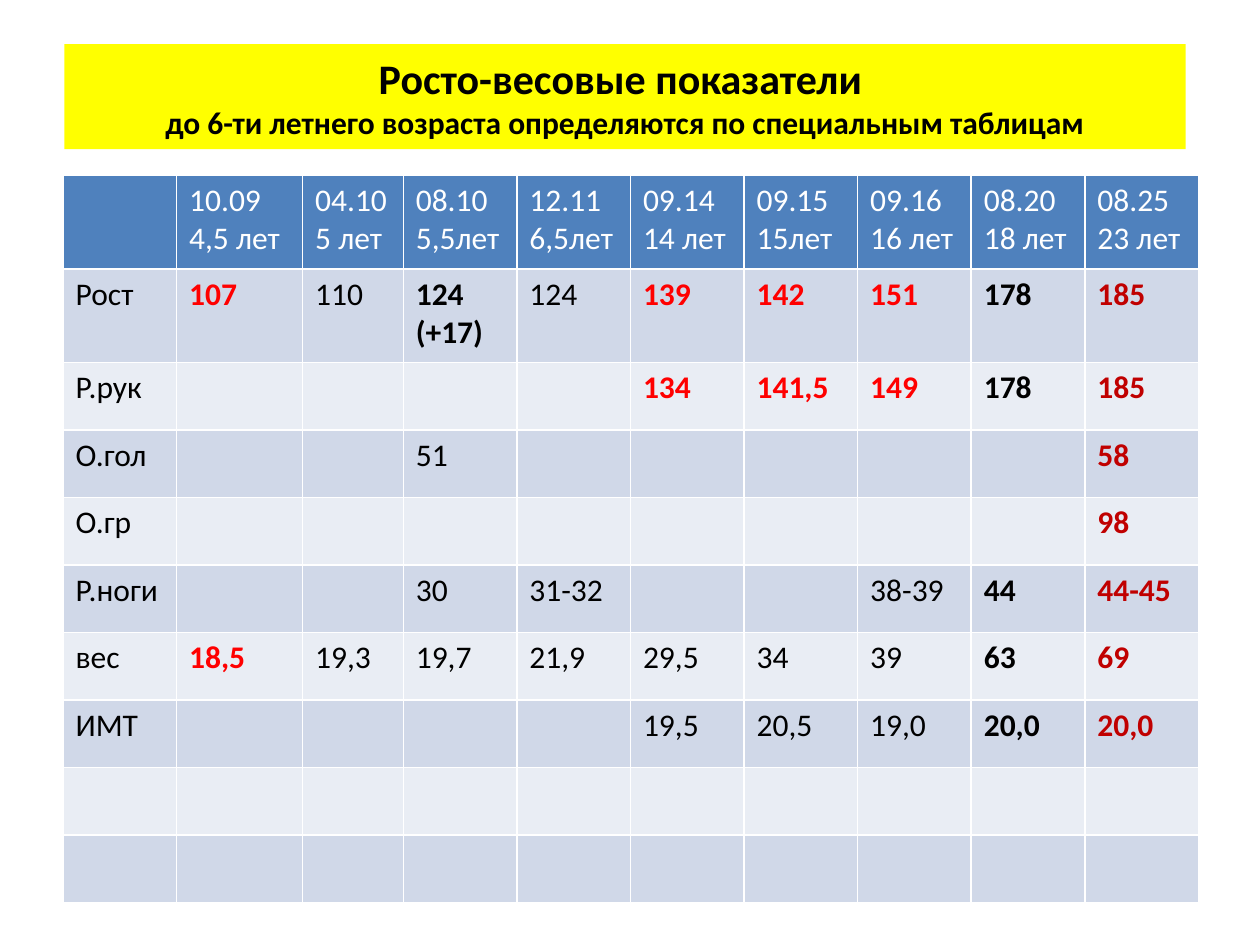
"""Build a slide with a table of height and weight figures by age."""
import pptx
import pptx.dml.color
import pptx.enum.text
import pptx.util

Cm = pptx.util.Cm
RGB = pptx.dml.color.RGBColor.from_string
COLORS = {
    "title": "FFFF00", "head": "4F81BD", "odd": "D0D8E8", "even": "E9EDF4",
    "white": "FFFFFF", "black": "000000", "red": "FF0000", "dark": "C00000",
}


def write(para, text, size=18, color="black", bold=False, align=None):
    """Add one formatted run to a paragraph."""
    para.alignment = align
    run = para.add_run()
    run.text = text
    run.font.name = "Calibri"
    run.font.size = pptx.util.Pt(size)
    run.font.bold = bold
    run.font.color.rgb = RGB(COLORS[color])


deck = pptx.Presentation()
deck.slide_width, deck.slide_height = Cm(25.4), Cm(19.05)
slide = deck.slides.add_slide(deck.slide_layouts[5])

title = slide.shapes.title
title.left, title.top, title.width, title.height = Cm(1.3), Cm(0.92), Cm(22.6), Cm(2.06)
title.fill.solid()
title.fill.fore_color.rgb = RGB(COLORS["title"])
frame = title.text_frame
frame.auto_size = pptx.enum.text.MSO_AUTO_SIZE.SHAPE_TO_FIT_TEXT
center = pptx.enum.text.PP_ALIGN.CENTER
write(frame.paragraphs[0], "Росто-весовые показатели ", size=24, bold=True, align=center)
write(frame.add_paragraph(), "до 6-ти летнего возраста определяются по специальным таблицам",
      bold=True, align=center)

rows = [
    ["", "10.09\n4,5 лет", "04.10 5 лет", "08.10\n5,5лет", "12.11 6,5лет", "09.14\n14 лет",
     "09.15 15лет", "09.16 16 лет", "08.20\n18 лет", "08.25\n23 лет"],
    ["Рост", "107", "110", "124\n(+17)", "124", "139", "142", "151", "178", "185"],
    ["Р.рук", "", "", "", "", "134", "141,5", "149", "178", "185"],
    ["О.гол", "", "", "51", "", "", "", "", "", "58"],
    ["О.гр", "", "", "", "", "", "", "", "", "98"],
    ["Р.ноги", "", "", "30", "31-32", "", "", "38-39", "44", "44-45"],
    ["вес", "18,5", "19,3", "19,7", "21,9", "29,5", "34", "39", "63", "69"],
    ["ИМТ", "", "", "", "", "19,5", "20,5", "19,0", "20,0", "20,0"],
    [""] * 10,
    [""] * 10,
]
red = {(1, 1), (1, 5), (1, 6), (1, 7), (2, 5), (2, 6), (2, 7), (6, 1)}
widths = [2.29, 2.54, 2.03] + [2.29] * 7
heights = [1.89] * 2 + [1.36] * 8

table = slide.shapes.add_table(len(rows), len(widths), Cm(1.27), Cm(3.53),
                               Cm(sum(widths)), Cm(sum(heights))).table
for col, width in zip(table.columns, widths):
    col.width = Cm(width)

for r, texts in enumerate(rows):
    table.rows[r].height = Cm(heights[r])
    for c, text in enumerate(texts):
        cell = table.cell(r, c)
        cell.fill.solid()
        band = "head" if r == 0 else "odd" if r % 2 else "even"
        cell.fill.fore_color.rgb = RGB(COLORS[band])
        if r == 0:
            color, bold = "white", False
        elif (r, c) in red:
            color, bold = "red", True
        elif c == 9:
            color, bold = "dark", True
        else:
            color, bold = "black", c == 8 or (r, c) == (1, 3)
        if text:
            for i, line in enumerate(text.split("\n")):
                para = cell.text_frame.add_paragraph() if i else cell.text_frame.paragraphs[0]
                write(para, line, color=color, bold=bold)

deck.save("out.pptx")
